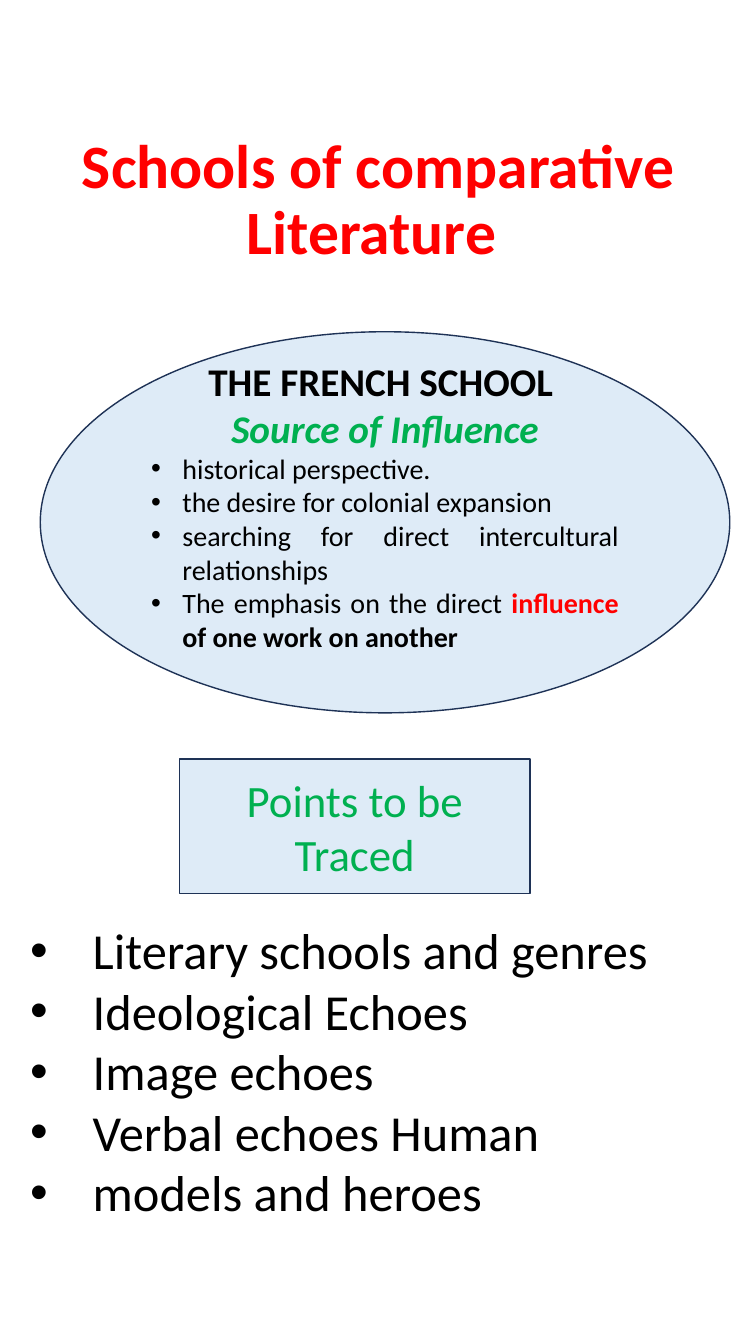
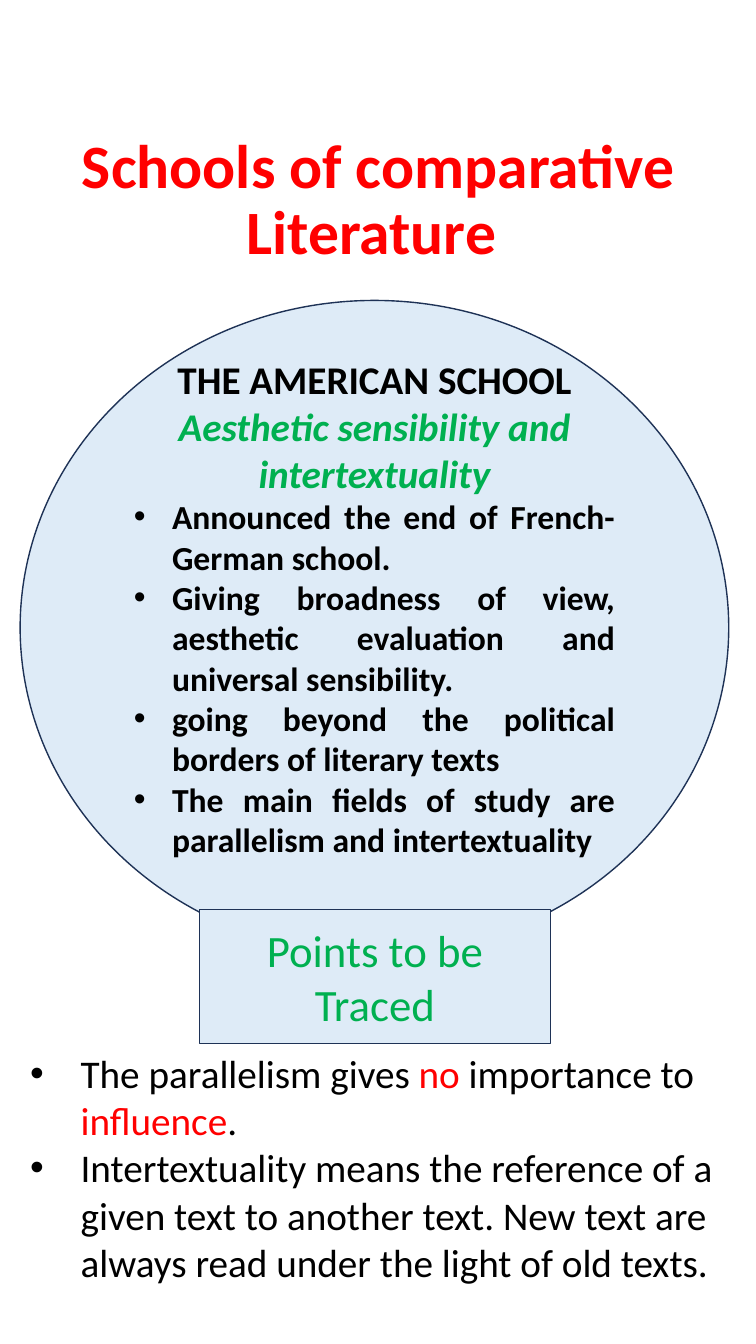
from lxml import etree
from pptx import Presentation
from pptx.dml.color import RGBColor
from pptx.enum.shapes import MSO_SHAPE
from pptx.enum.text import MSO_ANCHOR, MSO_AUTO_SIZE, PP_ALIGN
from pptx.oxml.ns import qn
from pptx.util import Emu, Pt

ELLIPSE, RECTANGLE = MSO_SHAPE.OVAL, MSO_SHAPE.RECTANGLE
TOP, MIDDLE = MSO_ANCHOR.TOP, MSO_ANCHOR.MIDDLE
LEFT, CENTER, JUSTIFY = PP_ALIGN.LEFT, PP_ALIGN.CENTER, PP_ALIGN.JUSTIFY
NO_FIT = MSO_AUTO_SIZE.NONE
TITLE_AND_CONTENT = 1

FONT = "Calibri"
RED, GREEN, BLACK = "FF0000", "00B050", "000000"
PALE_BLUE, NAVY = "DEEBF7", "1E3256"


def px(length):
    return Emu(length * 9144)


def color(hex_string):
    return RGBColor.from_string(hex_string)


class Deck:
    def __init__(self, width, height):
        self.presentation = Presentation()
        self.presentation.slide_width = px(width)
        self.presentation.slide_height = px(height)
        self.slide = None

    def new_slide(self, title):
        layout = self.presentation.slide_layouts[TITLE_AND_CONTENT]
        self.slide = self.presentation.slides.add_slide(layout)
        heading = self.slide.shapes.title
        self.place(heading, 52, 71, 647, 258)
        frame = self.prepare(heading, MIDDLE)
        self.add_text(frame, title, 44, RED, CENTER, bold=True, spacing=0.9)

    def place(self, shape, left, top, width, height):
        shape.left, shape.top = px(left), px(top)
        shape.width, shape.height = px(width), px(height)

    def prepare(self, shape, anchor):
        frame = shape.text_frame
        frame.word_wrap = True
        frame.auto_size = NO_FIT
        frame.vertical_anchor = anchor
        return frame

    def add_text(self, frame, content, size, ink=BLACK, align=LEFT, bold=False,
                 italic=False, indent=0, spacing=1.0):
        paragraph = frame.paragraphs[0]
        if paragraph.runs:
            paragraph = frame.add_paragraph()
        paragraph.alignment = align
        paragraph.line_spacing = spacing
        paragraph.space_before = Pt(0)
        if indent:
            self.bullet(paragraph, indent)
        font = paragraph.font
        font.name, font.size = FONT, Pt(size)
        font.bold, font.italic = bold, italic
        if isinstance(content, str):
            font.color.rgb = color(ink)
            paragraph.add_run().text = content
            return
        for text, run_ink, run_bold in content:
            run = paragraph.add_run()
            run.text = text
            run.font.bold = run_bold
            run.font.color.rgb = color(run_ink)

    def bullet(self, paragraph, indent):
        properties = paragraph._p.get_or_add_pPr()
        properties.set("marL", str(px(indent)))
        properties.set("indent", str(-px(indent)))
        etree.SubElement(properties, qn("a:buFont")).set("typeface", "Arial")
        etree.SubElement(properties, qn("a:buChar")).set("char", "•")

    def panel(self, kind, left, top, width, height):
        shape = self.slide.shapes.add_shape(
            kind, px(left), px(top), px(width), px(height))
        shape.shadow.inherit = False
        shape.fill.solid()
        shape.fill.fore_color.rgb = color(PALE_BLUE)
        shape.line.color.rgb = color(NAVY)
        shape.line.width = Pt(1)
        return self.prepare(shape, MIDDLE)

    def school(self, box, name, motto, features, size, indent, bottom_inset):
        frame = self.panel(ELLIPSE, *box)
        frame.margin_bottom = px(bottom_inset)
        self.add_text(frame, name, 28, BLACK, CENTER, bold=True)
        self.add_text(frame, motto, 28, GREEN, CENTER, bold=True, italic=True)
        for feature, bold in features:
            self.add_text(frame, feature, size, BLACK, JUSTIFY, bold,
                          indent=indent)

    def points_label(self, left, top):
        frame = self.panel(RECTANGLE, left, top, 348, 133)
        self.add_text(frame, "Points to be Traced", 32, GREEN, CENTER)

    def points(self, top, height, items, size, indent):
        body = self.slide.placeholders[1]
        self.place(body, 20, top, 703, height)
        frame = self.prepare(body, TOP)
        for item in items:
            self.add_text(frame, item, size, indent=indent)


def main():
    deck = Deck(750, 1333)
    title = "Schools of comparative Literature "

    deck.new_slide(title)
    french_features = [
        ("historical perspective.", False),
        ("the desire for colonial expansion", False),
        ("searching for direct intercultural relationships ", False),
        ([("The emphasis on the direct ", BLACK, False),
          ("influence ", RED, True),
          ("of one work on another", BLACK, True)], False),
    ]
    deck.school((40, 329, 684, 378), "THE FRENCH SCHOOL ",
                "Source of Influence", french_features, 20, 31, 39)
    deck.points_label(178, 753)
    deck.points(907, 313, [
        "Literary schools and genres",
        "Ideological Echoes",
        "Image echoes",
        "Verbal echoes Human",
        "models and heroes",
    ], 36, 62)

    deck.new_slide(title)
    american_features = [
        ("Announced the end of French- German school.", True),
        ("Giving broadness of view, aesthetic evaluation and "
         "universal sensibility.", True),
        ("going beyond the political borders of literary texts ", True),
        ("The main fields of study are parallelism and intertextuality", True),
    ]
    deck.school((20, 298, 703, 649), "THE AMERICAN SCHOOL",
                "Aesthetic sensibility and intertextuality",
                american_features, 24, 38, 46)
    deck.points_label(198, 902)
    deck.points(1036, 246, [
        [("The parallelism gives ", BLACK, False), ("no", RED, False),
         (" importance to ", BLACK, False), ("influence", RED, False),
         (".", BLACK, False)],
        "Intertextuality means the reference of a given text to another text. "
        "New text are always read under the light of old texts.",
    ], 28, 50)

    deck.presentation.save("out.pptx")


if __name__ == "__main__":
    main()
